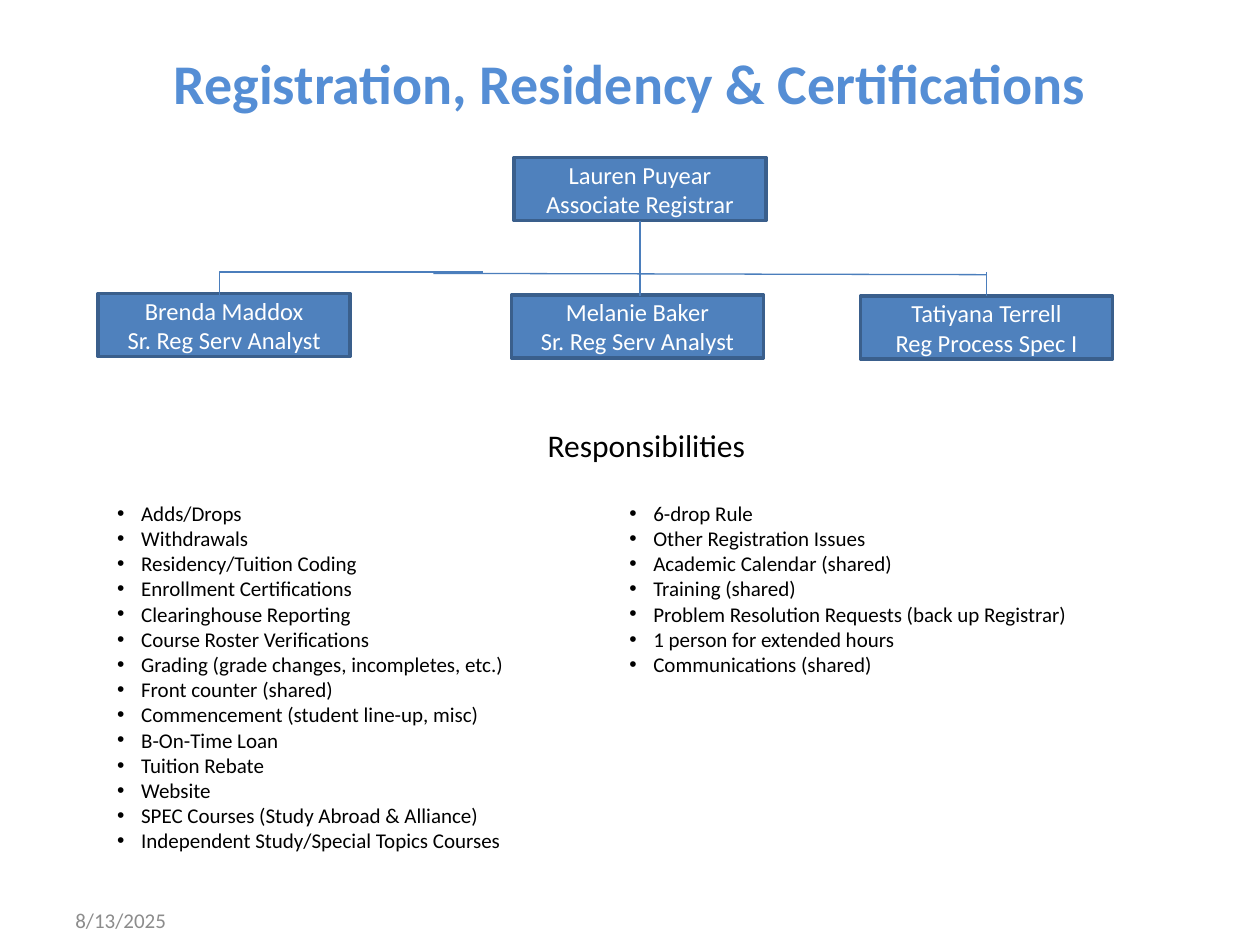
"""Build the registration team slide: staff chart and list of duties."""
import pptx
import pptx.dml.color
import pptx.enum.shapes
import pptx.enum.text
import pptx.oxml
import pptx.util
from pptx.util import Inches

ALIGN = pptx.enum.text.PP_ALIGN
ANCHOR = pptx.enum.text.MSO_ANCHOR
KIND = pptx.enum.shapes.MSO_CONNECTOR


def color(text):
    return pptx.dml.color.RGBColor.from_string(text)


def write(frame, lines, size, tint, align, anchor):
    frame.word_wrap = True
    frame.auto_size = pptx.enum.text.MSO_AUTO_SIZE.NONE
    frame.vertical_anchor = anchor
    frame.text = "\n".join(lines)
    for para in frame.paragraphs:
        para.alignment = align
        para.space_before = pptx.util.Pt(0)
        para.font.name = "Calibri"
        para.font.size = pptx.util.Pt(size)
        para.font.color.rgb = color(tint)


deck = pptx.Presentation()
deck.slide_width, deck.slide_height = Inches(10), Inches(7.5)
slide = deck.slides.add_slide(deck.slide_layouts[1])
title, body = slide.placeholders

title.left, title.top = Inches(1), Inches(0.25)
title.width, title.height = Inches(8), Inches(0.8)
write(title.text_frame, ["Registration, Residency & Certifications"],
      32, "558ED5", ALIGN.CENTER, ANCHOR.MIDDLE)
title.text_frame.paragraphs[0].font.bold = True

staff = [
    (4.08, 1.25, "Lauren Puyear", "Associate Registrar"),
    (4.06, 2.34, "Melanie Baker", "Sr. Reg Serv Analyst"),
    (0.78, 2.33, "Brenda Maddox", "Sr. Reg Serv Analyst"),
    (6.83, 2.35, "Tatiyana Terrell", "Reg Process Spec I"),
]
for left, top, name, role in staff:
    box = slide.shapes.add_shape(
        pptx.enum.shapes.MSO_SHAPE.RECTANGLE,
        Inches(left), Inches(top), Inches(2), Inches(0.5))
    box.shadow.inherit = False
    box.fill.solid()
    box.fill.fore_color.rgb = color("4F81BD")
    box.line.color.rgb = color("3A5F8C")
    box.line.width = pptx.util.Pt(2)
    write(box.text_frame, [name, role], 14, "FFFFFF", ALIGN.CENTER, ANCHOR.MIDDLE)

links = [
    (KIND.STRAIGHT, 5.08, 1.75, 5.08, 2.17),
    (KIND.STRAIGHT, 5.08, 2.35, 5.08, 2.17),
    (KIND.STRAIGHT, 3.44, 2.17, 7.83, 2.18),
    (KIND.STRAIGHT, 7.83, 2.35, 7.83, 2.16),
    (KIND.ELBOW, 3.83, 2.16, 1.74, 2.35),
]
for kind, *ends in links:
    link = slide.shapes.add_connector(kind, *map(Inches, ends))
    link.line.color.rgb = color("4B7EBC")
    link.line.width = pptx.util.Pt(0.75)
    props = link.element.spPr
    props.append(pptx.oxml.parse_xml(
        '<a:effectLst xmlns:a="http://schemas.openxmlformats.org/drawingml/2006/main"/>'))
    if kind == KIND.ELBOW:
        props.prstGeom.set("prst", "bentConnector2")

labels = [
    (1.42, 3.33, 7.42, 0.42, "Responsibilities", 18, "000000", ALIGN.CENTER, ANCHOR.TOP),
    (0.5, 7.1, 2.33, 0.4, "8/13/2025", 12, "8C8C8C", ALIGN.LEFT, ANCHOR.MIDDLE),
]
for left, top, width, height, text, *style in labels:
    label = slide.shapes.add_textbox(
        Inches(left), Inches(top), Inches(width), Inches(height))
    write(label.text_frame, [text], *style)

duties = [
    "Adds/Drops",
    "Withdrawals",
    "Residency/Tuition Coding",
    "Enrollment Certifications",
    "Clearinghouse Reporting",
    "Course Roster Verifications",
    "Grading (grade changes, incompletes, etc.)",
    "Front counter (shared)",
    "Commencement (student line-up, misc)",
    "B-On-Time Loan",
    "Tuition Rebate",
    "Website",
    "SPEC Courses (Study Abroad & Alliance)",
    "Independent Study/Special Topics Courses",
    "6-drop Rule",
    "Other Registration Issues",
    "Academic Calendar (shared)",
    "Training (shared)",
    "Problem Resolution Requests (back up Registrar)",
    "1 person for extended hours",
    "Communications (shared)",
]
body.left, body.top = Inches(0.83), Inches(3.92)
body.width, body.height = Inches(8.33), Inches(2.92)
write(body.text_frame, duties, 12, "000000", ALIGN.LEFT, ANCHOR.TOP)
body.element.txBody.bodyPr.set("numCol", "2")
indent = Inches(0.19)
for para in body.text_frame.paragraphs:
    props = para._p.get_or_add_pPr()
    props.set("marL", str(indent))
    props.set("indent", str(-indent))

deck.save("out.pptx")
